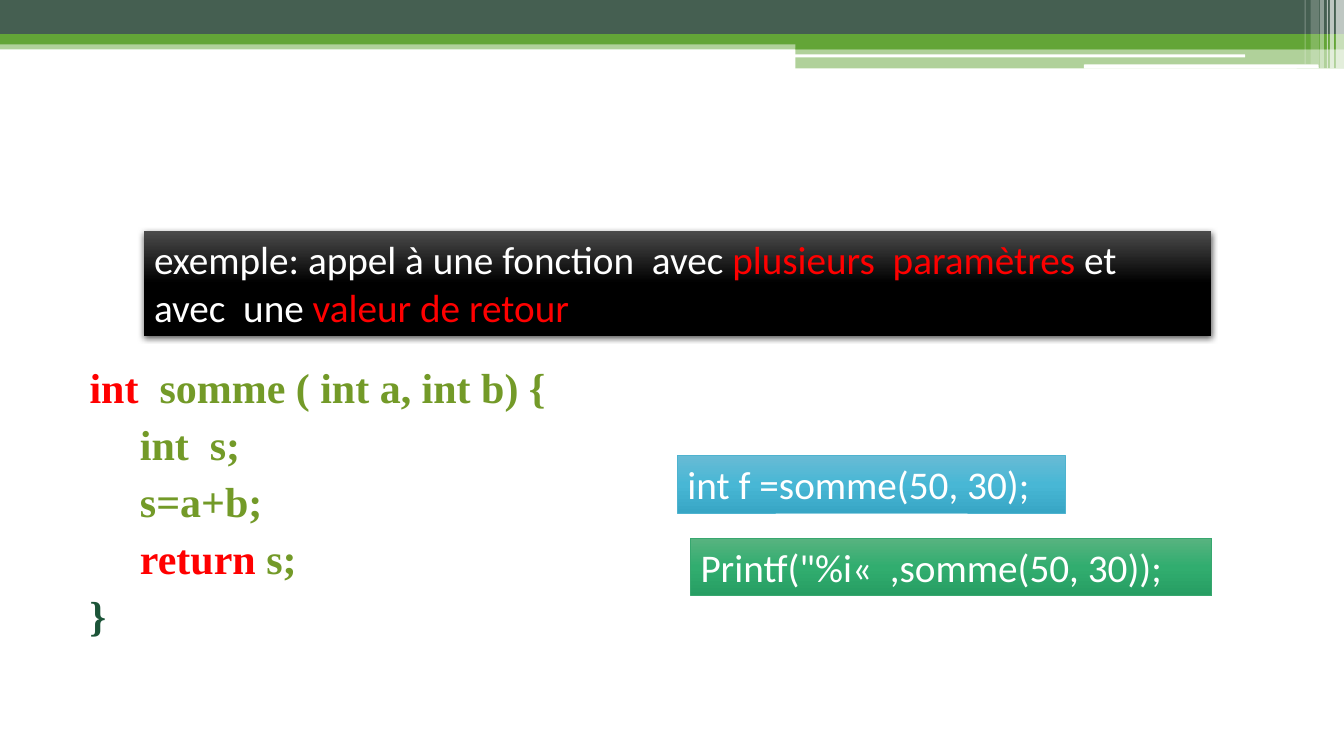
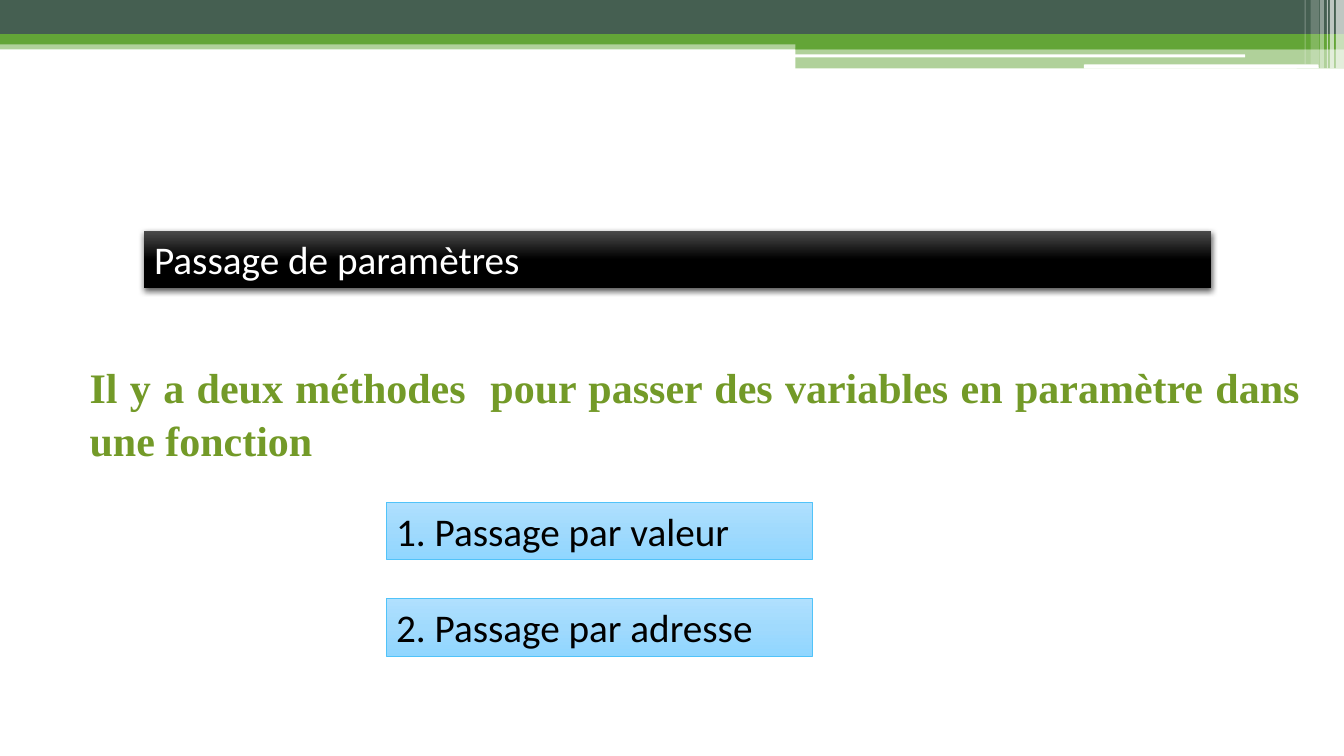
from copy import deepcopy
from typing import NamedTuple

from lxml import etree
from pptx import Presentation
from pptx.dml.color import RGBColor
from pptx.enum.shapes import MSO_SHAPE as Preset
from pptx.enum.text import MSO_AUTO_SIZE as AutoSize, MSO_ANCHOR as Anchor, PP_ALIGN as Align
from pptx.oxml.ns import qn
from pptx.shapes.autoshape import Shape
from pptx.slide import Slide
from pptx.text.text import _Paragraph as Paragraph
from pptx.util import Inches, Pt

WHITE, BLACK, RED = "FFFFFF", "000000", "FF0000"
GREEN, SLATE = "63A537", "455F51"
CODE_GREEN, DARK_GREEN = "739A28", "1C5438"
BODY_FONT, CODE_FONT = "Times New Roman", "Calibri"


class Band(NamedTuple):
    left: float
    top: float
    width: float
    height: float
    color: str
    opacity: int = 100
    preset: Preset = Preset.RECTANGLE


class Run(NamedTuple):
    text: str
    color: str


class BoxStyle(NamedTuple):
    gradient: tuple[str, str, str]
    line: str | None = None


class Box(NamedTuple):
    left: float
    top: float
    width: float
    style: BoxStyle
    runs: list[Run]
    height: float = 0.57


BANDS = [
    Band(0, 0.4, 13.33, 0.09, GREEN, 50),
    Band(0, 0, 13.33, 0.34, SLATE),
    Band(0, 0.34, 13.33, 0.1, GREEN),
    Band(7.89, 0.39, 5.44, 0.1, GREEN),
    Band(7.89, 0.48, 5.44, 0.2, GREEN, 50),
    Band(7.88, 0.54, 4.47, 0.03, WHITE, preset=Preset.ROUNDED_RECTANGLE),
    Band(10.75, 0.64, 2.33, 0.04, WHITE, preset=Preset.ROUNDED_RECTANGLE),
    Band(13.25, 0, 0.08, 0.68, WHITE, 65),
    Band(13.19, 0, 0.04, 0.68, WHITE, 65),
    Band(13.16, 0, 0.01, 0.68, WHITE, 60),
    Band(13.09, 0, 0.04, 0.68, WHITE, 40),
    Band(13, 0, 0.08, 0.64, WHITE, 20),
    Band(12.94, 0, 0.01, 0.64, WHITE, 30),
]

BANNER = BoxStyle(("4B4B4B", BLACK, BLACK))
BLUE = BoxStyle(("68BBD5", "48B7D5", "38A6C5"), "4EB3CF")
EMERALD = BoxStyle(("58B380", "31AD6F", "279E63"), "37A76F")
SKY = BoxStyle(("B0E0FE", "A0DAFD", "90D6FF"), "51C3F9")


def rgb(color: str) -> RGBColor:
    return RGBColor.from_string(color)


def add_preset(slide: Slide, preset: Preset, left: float, top: float,
               width: float, height: float) -> Shape:
    shape = slide.shapes.add_shape(
        preset, Inches(left), Inches(top), Inches(width), Inches(height))
    shape.shadow.inherit = False
    shape.line.fill.background()
    return shape


def add_band(slide: Slide, band: Band) -> None:
    shape = add_preset(slide, band.preset, band.left, band.top, band.width, band.height)
    shape.fill.solid()
    shape.fill.fore_color.rgb = rgb(band.color)
    if band.opacity < 100:
        color = shape._element.spPr.find(qn("a:solidFill"))[0]
        etree.SubElement(color, qn("a:alpha"), val=str(band.opacity * 1000))


def set_gradient(shape: Shape, colors: tuple[str, str, str]) -> None:
    """Fill from top to bottom with evenly spaced stops."""
    shape.fill.gradient()
    shape.fill.gradient_angle = 270
    stop_list = shape._element.spPr.find(qn("a:gradFill")).find(qn("a:gsLst"))
    stop_list.append(deepcopy(stop_list[0]))
    for index, (stop, color) in enumerate(zip(shape.fill.gradient_stops, colors)):
        stop.position = index / (len(colors) - 1)
        stop.color.rgb = rgb(color)


def add_shadow(shape: Shape) -> None:
    effects = shape._element.spPr.find(qn("a:effectLst"))
    shadow = etree.SubElement(
        effects, qn("a:outerShdw"), blurRad=str(Pt(4.5)), dist=str(Pt(1.5)),
        dir="5400000", rotWithShape="0")
    color = etree.SubElement(shadow, qn("a:srgbClr"), val=BLACK)
    etree.SubElement(color, qn("a:alpha"), val="63000")


def add_runs(paragraph: Paragraph, runs: list[Run], font: str, size: int,
             bold: bool = False) -> None:
    for item in runs:
        run = paragraph.add_run()
        run.text = item.text
        run.font.name = font
        run.font.size = Pt(size)
        run.font.bold = bold
        run.font.color.rgb = rgb(item.color)


def add_box(slide: Slide, box: Box) -> None:
    shape = add_preset(slide, Preset.RECTANGLE, box.left, box.top, box.width, box.height)
    set_gradient(shape, box.style.gradient)
    if box.style.line:
        shape.line.color.rgb = rgb(box.style.line)
        shape.line.width = Pt(0.5)
    else:
        add_shadow(shape)
    text_frame = shape.text_frame
    text_frame.word_wrap = True
    text_frame.auto_size = AutoSize.SHAPE_TO_FIT_TEXT
    text_frame.vertical_anchor = Anchor.TOP
    paragraph = text_frame.paragraphs[0]
    paragraph.alignment = Align.LEFT
    add_runs(paragraph, box.runs, CODE_FONT, 28)


def add_banner(slide: Slide, runs: list[Run], height: float = 0.57) -> None:
    add_box(slide, Box(1.43, 2.29, 10.58, BANNER, runs, height))


def add_body(slide: Slide, lines: list[list[Run]]) -> None:
    text_frame = slide.shapes.add_textbox(
        Inches(0.67), Inches(3.51), Inches(12.33), Inches(1.54)).text_frame
    text_frame.word_wrap = True
    for index, runs in enumerate(lines):
        paragraph = text_frame.add_paragraph() if index else text_frame.paragraphs[0]
        paragraph._p.get_or_add_pPr().set("marL", str(Inches(0.12)))
        paragraph.alignment = Align.JUSTIFY
        paragraph.line_spacing = 1.05
        if index:
            paragraph.space_before = Pt(3)
        add_runs(paragraph, runs, BODY_FONT, 30, bold=True)


def add_banded_slide(presentation: Presentation) -> Slide:
    slide = presentation.slides.add_slide(presentation.slide_layouts[6])
    for band in BANDS:
        add_band(slide, band)
    return slide


def build_call_example(presentation: Presentation) -> None:
    slide = add_banded_slide(presentation)
    add_body(slide, [
        [Run("int", RED), Run("  somme ( int a, int b) {", CODE_GREEN)],
        [Run("\tint  s;", CODE_GREEN)],
        [Run("\ts=a+b;", CODE_GREEN)],
        [Run("\t", CODE_GREEN), Run("return", RED), Run(" s;", CODE_GREEN)],
        [Run("}", DARK_GREEN)],
    ])
    add_banner(slide, [
        Run("exemple: appel à une fonction  avec ", WHITE),
        Run("plusieurs  paramètres ", RED),
        Run("et  avec  une ", WHITE),
        Run("valeur de retour", RED),
    ], height=1.04)
    add_box(slide, Box(6.72, 4.52, 3.85, BLUE, [Run("int f =somme(50, 30);", WHITE)]))
    add_box(slide, Box(6.85, 5.34, 5.17, EMERALD,
                       [Run('Printf("%i«  ,somme(50, 30));', WHITE)]))


def build_parameter_passing(presentation: Presentation) -> None:
    slide = add_banded_slide(presentation)
    add_body(slide, [[Run("Il y a deux méthodes  pour passer des variables en paramètre "
                          "dans une fonction", CODE_GREEN)]])
    add_banner(slide, [Run("Passage de paramètres", WHITE)])
    for index, method in enumerate(["1. Passage par valeur", "2. Passage par adresse"]):
        add_box(slide, Box(3.83, 4.98 + index * 0.96, 4.23, SKY, [Run(method, BLACK)]))


def main() -> None:
    presentation = Presentation()
    presentation.slide_width = Inches(13.33)
    presentation.slide_height = Inches(7.5)
    build_call_example(presentation)
    build_parameter_passing(presentation)
    presentation.save("out.pptx")


if __name__ == "__main__":
    main()
